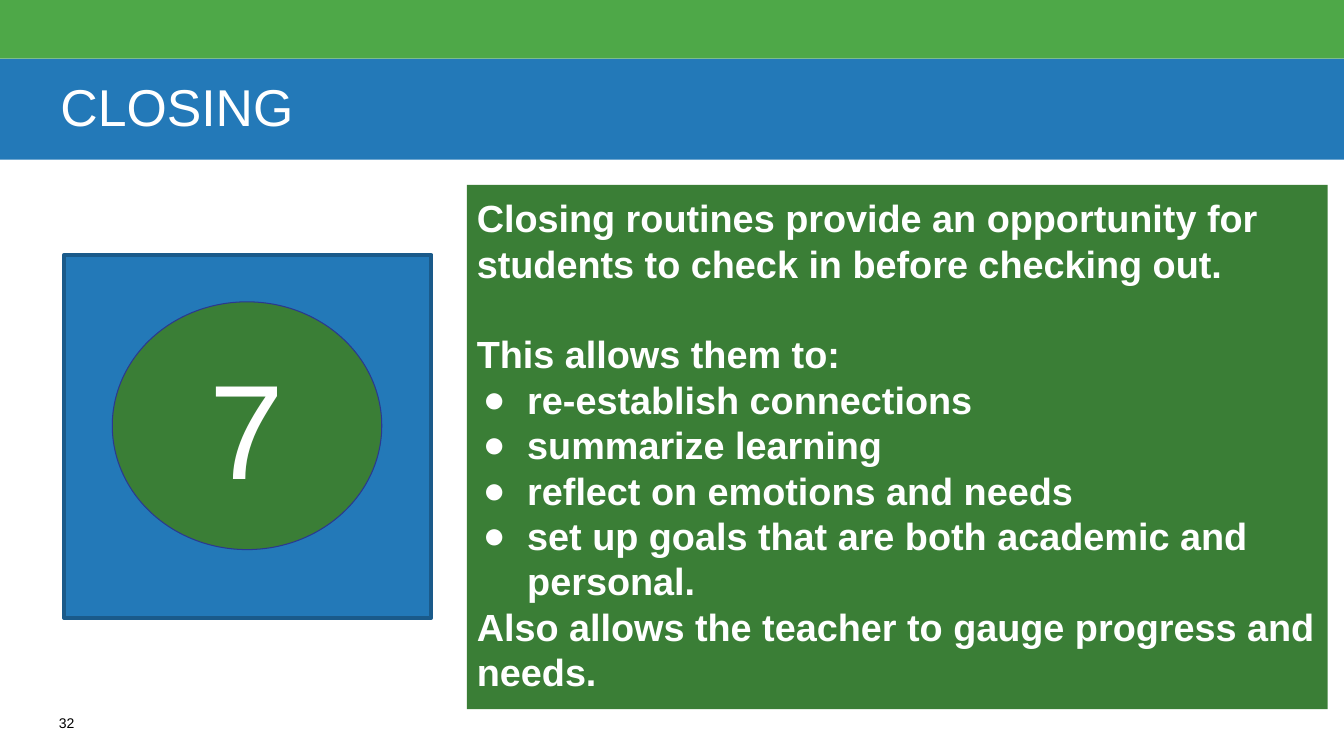
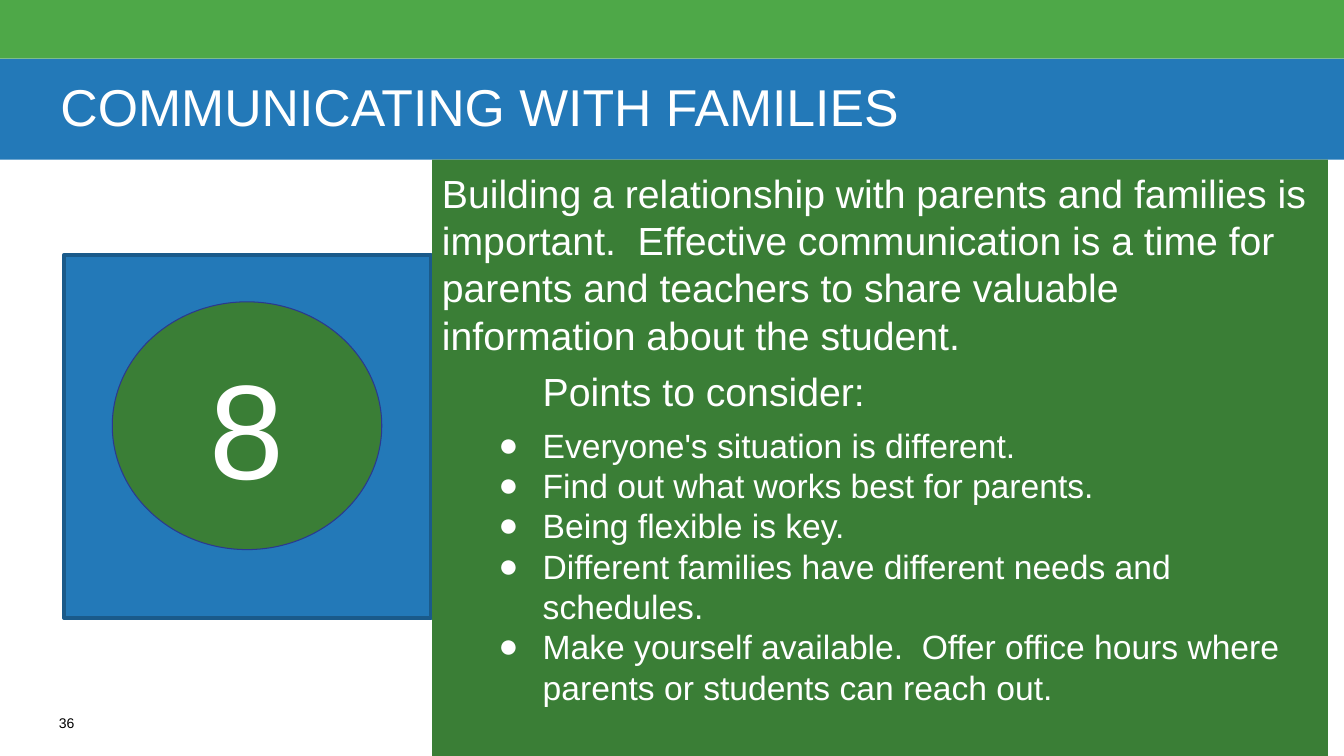
from lxml.etree import SubElement
from pptx import Presentation
from pptx.dml.color import RGBColor
from pptx.enum.shapes import MSO_SHAPE as Shape
from pptx.enum.text import MSO_ANCHOR as Anchor, MSO_AUTO_SIZE as AutoSize, PP_ALIGN as Align
from pptx.oxml.ns import qn
from pptx.util import Pt

WHITE = RGBColor(0xFF, 0xFF, 0xFF)
BLACK = RGBColor(0x00, 0x00, 0x00)
LIGHT_GREEN = RGBColor(0x4E, 0xA8, 0x48)
DARK_GREEN = RGBColor(0x3A, 0x7E, 0x36)
BLUE = RGBColor(0x23, 0x79, 0xB8)
DARK_BLUE = RGBColor(0x1A, 0x5A, 0x8A)
INDIGO = RGBColor(0x2B, 0x38, 0x90)

FONT = "Arial"
PAGE_WIDTH, PAGE_HEIGHT = 960, 540
BAND_HEIGHT, TITLE_HEIGHT = 42, 72
BADGE_BOX = (45.7, 182.2, 262.5, 259)
BULLET_HANG = 31.7


def place(item, box):
    item.left, item.top, item.width, item.height = (Pt(length) for length in box)


def add_block(page, kind, box, fill, line=None, line_width=0):
    block = page.shapes.add_shape(kind, *(Pt(length) for length in box))
    block.shadow.inherit = False
    block.fill.solid()
    block.fill.fore_color.rgb = fill
    if line is None:
        block.line.fill.background()
    else:
        block.line.color.rgb = line
        block.line.width = Pt(line_width)
    return block


def set_frame(item, insets=(7.2, 7.2), anchor=Anchor.TOP):
    """Set wrapping, anchor and the (horizontal, vertical) insets."""
    frame = item.text_frame
    frame.word_wrap = True
    frame.auto_size = AutoSize.NONE
    frame.vertical_anchor = anchor
    frame.margin_left = frame.margin_right = Pt(insets[0])
    frame.margin_top = frame.margin_bottom = Pt(insets[1])
    return frame


def write(para, text, size, color=WHITE, bold=False, align=Align.LEFT,
          spacing=1.0, before=0, indent=0, bullet=False):
    para.alignment = align
    para.line_spacing = spacing
    para.space_before = Pt(before)
    para.space_after = Pt(0)
    properties = para._p.get_or_add_pPr()
    properties.set("marL", str(Pt(indent)))
    properties.set("indent", str(Pt(-BULLET_HANG) if bullet else 0))
    if bullet:
        bullet_color = SubElement(properties, qn("a:buClr"))
        SubElement(bullet_color, qn("a:srgbClr"), val=str(WHITE))
        SubElement(properties, qn("a:buFont"), typeface=FONT)
        SubElement(properties, qn("a:buChar"), char="●")
    else:
        SubElement(properties, qn("a:buNone"))
    span = para.add_run()
    span.text = text
    span.font.name = FONT
    span.font.size = Pt(size)
    span.font.bold = bold
    span.font.color.rgb = color


def add_layout_band(page):
    """Draw the top band and move it into the layout that all pages share."""
    band = add_block(page, Shape.RECTANGLE, (0, 0, PAGE_WIDTH, BAND_HEIGHT), LIGHT_GREEN)
    page.slide_layout.shapes._spTree.append(band._element)


def add_title(page, text):
    title = page.shapes.title
    place(title, (0, BAND_HEIGHT, PAGE_WIDTH, TITLE_HEIGHT))
    title.fill.solid()
    title.fill.fore_color.rgb = BLUE
    frame = set_frame(title, (43.2, 0), Anchor.MIDDLE)
    write(frame.paragraphs[0], text, 37, spacing=0.9)


def add_page_number(page, number):
    box = page.shapes.add_textbox(Pt(42), Pt(510), Pt(30), Pt(18))
    write(set_frame(box, (0, 0)).paragraphs[0], str(number), 10, color=BLACK)


def add_badge(page, box, number):
    left, top, width, height = box
    add_block(page, Shape.RECTANGLE, box, BLUE, DARK_BLUE, 3)
    disc = add_block(page, Shape.OVAL, (left + 34.5, top + 33.4, width - 70, height - 82),
                     DARK_GREEN, INDIGO, 0.75)
    frame = set_frame(disc, anchor=Anchor.MIDDLE)
    write(frame.paragraphs[0], str(number), 96, align=Align.CENTER)


def add_panel(page, box, lines, **shared):
    """Fill a green panel with (text, format) lines on top of a shared format."""
    frame = set_frame(add_block(page, Shape.RECTANGLE, box, DARK_GREEN))
    for index, (text, own) in enumerate(lines):
        para = frame.add_paragraph() if index else frame.paragraphs[0]
        write(para, text, **{**shared, **own})


def add_topic_page(deck, title, page_number, topic_number, panel_box, lines, **shared):
    page = deck.slides.add_slide(deck.slide_layouts[5])
    add_title(page, title)
    add_page_number(page, page_number)
    add_badge(page, BADGE_BOX, topic_number)
    add_panel(page, panel_box, lines, **shared)
    return page


def main():
    deck = Presentation()
    deck.slide_width, deck.slide_height = Pt(PAGE_WIDTH), Pt(PAGE_HEIGHT)

    item = {"indent": 36, "bullet": True}
    closing = add_topic_page(deck, "CLOSING", 32, 7, (333.5, 132, 614.8, 374.5), [
        ("Closing routines provide an opportunity for students to check in "
         "before checking out.", {}),
        ("This allows them to:", {"before": 32.4}),
        ("re-establish connections", item),
        ("summarize learning", item),
        ("reflect on emotions and needs", item),
        ("set up goals that are both academic and personal.", item),
        ("Also allows the teacher to gauge progress and needs.", {}),
    ], size=27, bold=True)
    add_layout_band(closing)

    point = {"size": 24, "indent": 72, "bullet": True}
    panel_top = BAND_HEIGHT + TITLE_HEIGHT
    add_topic_page(deck, "COMMUNICATING WITH FAMILIES", 36, 8,
                   (308.6, panel_top, 640, PAGE_HEIGHT - panel_top), [
        ("Building a relationship with parents and families is important.  "
         "Effective communication is a time for parents and teachers to share "
         "valuable information about the student.", {"before": 7}),
        ("Points to consider:", {"before": 7, "indent": 72}),
        ("Everyone's situation is different.", {**point, "before": 7}),
        ("Find out what works best for parents.", point),
        ("Being flexible is key.", point),
        ("Different families have different needs and schedules.", point),
        ("Make yourself available.  Offer office hours where parents or "
         "students can reach out.", point),
    ], size=28)

    deck.save("out.pptx")


if __name__ == "__main__":
    main()
